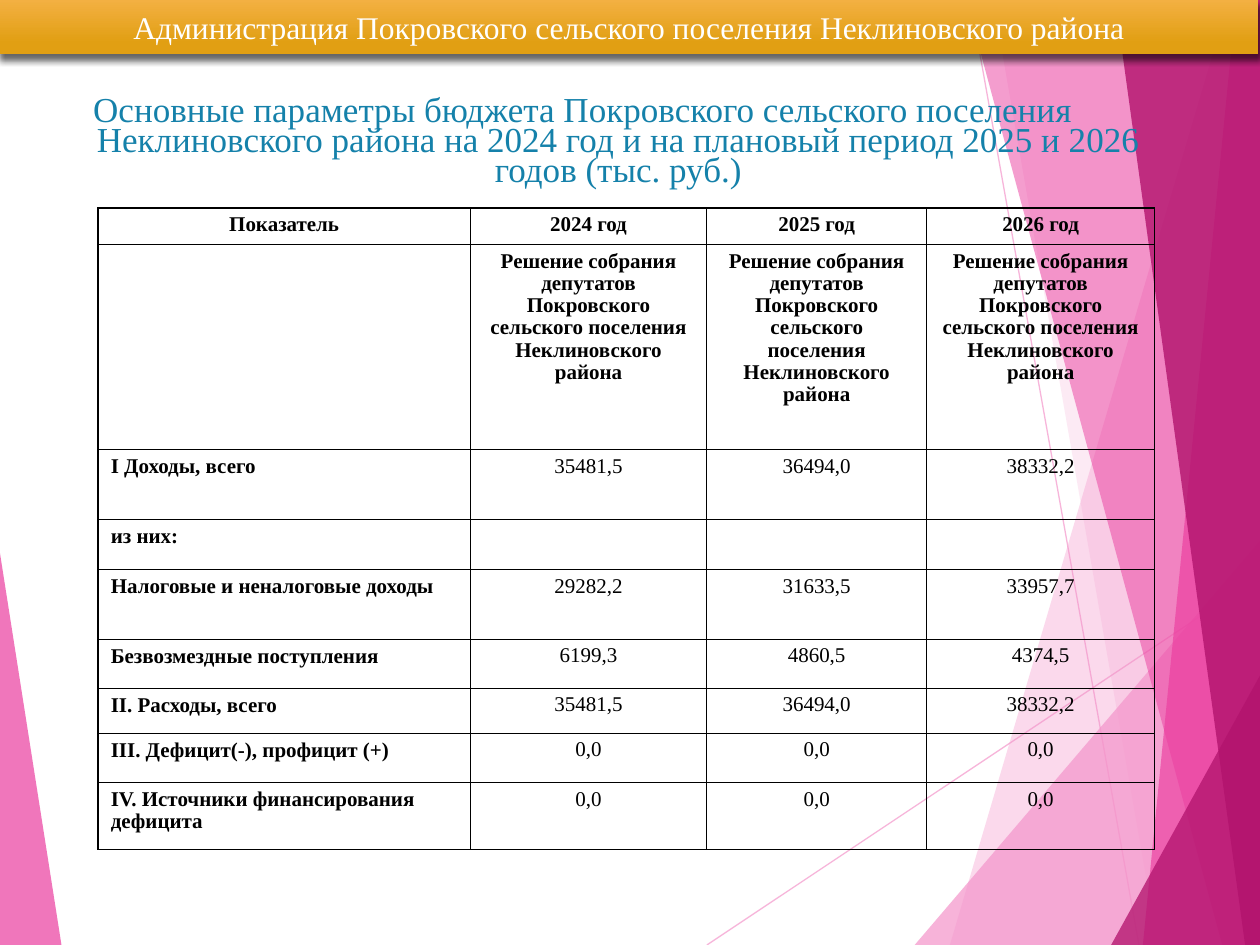
from lxml import etree
from pptx import Presentation
from pptx.dml.color import RGBColor
from pptx.enum.shapes import MSO_CONNECTOR, MSO_SHAPE
from pptx.enum.text import MSO_ANCHOR, PP_ALIGN
from pptx.oxml.ns import qn
from pptx.util import Cm, Pt

STRAIGHT, RECTANGLE = MSO_CONNECTOR.STRAIGHT, MSO_SHAPE.RECTANGLE
LEFT, CENTER, MIDDLE = PP_ALIGN.LEFT, PP_ALIGN.CENTER, MSO_ANCHOR.MIDDLE
WIDTH, HEIGHT = 25.4, 19.05
FONT = "Times New Roman"
COLORS = {
    "light": "F496CB", "pink": "EB3D9F", "dark": "B2136D",
    "title": "1581AA", "text": "000000", "white": "FFFFFF",
    "gold_top": "F3B042", "gold_bottom": "E19F13",
}

# Content
BANNER = "Администрация Покровского сельского поселения Неклиновского района"
TITLE = [
    ("Основные параметры бюджета Покровского сельского поселения",
     {"alignment": LEFT}),
    ("Неклиновского района на 2024 год и на плановый период "
     "2025 и 2026 годов (тыс. руб.)",
     {"alignment": CENTER, "line_spacing": 0.7}),
]
DECISION = ("Решение собрания депутатов Покровского сельского поселения "
            "Неклиновского района")
BUDGET = [  # row height, cells
    (0.71, ["Показатель", "2024 год", "2025 год", "2026 год"]),
    (4.14, [""] + [DECISION] * 3),
    (1.4, ["I Доходы, всего", "35481,5", "36494,0", "38332,2"]),
    (1, ["из них:", "", "", ""]),
    (1.4, ["Налоговые и неналоговые доходы", "29282,2", "31633,5", "33957,7"]),
    (0.99, ["Безвозмездные поступления", "6199,3", "4860,5", "4374,5"]),
    (0.91, ["II. Расходы, всего", "35481,5", "36494,0", "38332,2"]),
    (0.99, ["III. Дефицит(-), профицит (+)", "0,0", "0,0", "0,0"]),
    (1.35, ["IV. Источники финансирования дефицита", "0,0", "0,0", "0,0"]),
]
COLUMN_WIDTHS = [7.5, 4.77, 4.43, 4.6]
COLUMN_RULES = [1, 1, 0.5, 1, 1]
HEADER_ROWS = 2

# Backdrop: each band runs from its slanted edge to one side of the slide
RAYS = [((14.25, HEIGHT), (WIDTH, 11.62)), ((19.56, 0), (22.96, HEIGHT))]
BANDS = [  # edge start, edge end, side, colour, opacity in percent
    ((24.77, 0), (19.15, HEIGHT), WIDTH, "light", 36),
    ((20.02, 0), (23.34, HEIGHT), WIDTH, "light", 20),
    ((WIDTH, 10.9), (18.44, HEIGHT), WIDTH, "light", 72),
    ((19.48, 0), (24.64, HEIGHT), WIDTH, "pink", 50),
    ((24.92, 0), (23.04, HEIGHT), WIDTH, "pink", 66),
    ((22.48, 0), (25.1, HEIGHT), WIDTH, "dark", 80),
    ((WIDTH, 13.62), (22.4, HEIGHT), WIDTH, "dark", 76),
    ((0, 11.15), (1.24, HEIGHT), 0, "pink", 70),
]


def rgb(name):
    return RGBColor.from_string(COLORS[name])


def apply(target, formats):
    for name, value in formats.items():
        setattr(target, name, value)


def set_opacity(owner, percent):
    color = next(owner.iter(qn("a:srgbClr")))
    etree.SubElement(color, qn("a:alpha"), val=str(percent * 1000))


def write(paragraph, text, size, color, layout, bold=False):
    run = paragraph.add_run()
    run.text = text
    run.font.color.rgb = rgb(color)
    apply(run.font, {"name": FONT, "size": Pt(size), "bold": bold})
    apply(paragraph, layout)


def add_ray(slide, start, end):
    ray = slide.shapes.add_connector(
        STRAIGHT, *(Cm(value) for value in start + end))
    ray.line.color.rgb = rgb("light")
    ray.line.width = Pt(0.75)
    properties = ray._element.spPr
    set_opacity(properties, 70)
    etree.SubElement(properties, qn("a:effectLst"))


def add_band(slide, start, end, side, color, opacity):
    corners = [end, (side, HEIGHT), (side, start[1])]
    outline = slide.shapes.build_freeform(Cm(start[0]), Cm(start[1]))
    outline.add_line_segments([(Cm(x), Cm(y)) for x, y in corners], close=True)
    band = outline.convert_to_shape()
    band.shadow.inherit = False
    band.fill.solid()
    band.fill.fore_color.rgb = rgb(color)
    set_opacity(band._element.spPr, opacity)
    band.line.fill.background()


def add_title(slide):
    frame = slide.shapes.add_textbox(
        Cm(1.63), Cm(1.73), Cm(21.67), Cm(2.16)).text_frame
    apply(frame, {"word_wrap": True, "margin_top": Cm(0.03)})
    for index, (text, layout) in enumerate(TITLE):
        paragraph = frame.add_paragraph() if index else frame.paragraphs[0]
        write(paragraph, text, 20, "title", layout)


def add_border(cell, side, width):
    line = etree.SubElement(cell._tc.get_or_add_tcPr(), qn(f"a:ln{side}"),
                            w=str(Pt(width)))
    fill = etree.SubElement(line, qn("a:solidFill"))
    etree.SubElement(fill, qn("a:srgbClr"), val=COLORS["text"])


def add_budget(slide):
    heights = [height for height, _ in BUDGET]
    table = slide.shapes.add_table(
        len(BUDGET), len(COLUMN_WIDTHS), Cm(1.98), Cm(4.19),
        Cm(sum(COLUMN_WIDTHS)), Cm(sum(heights))).table
    apply(table, {"first_row": False, "horz_banding": False})
    for column, width in zip(table.columns, COLUMN_WIDTHS):
        column.width = Cm(width)
    row_rules = [1] + [0.5] * (len(BUDGET) - 1) + [1]
    for r, (height, texts) in enumerate(BUDGET):
        table.rows[r].height = Cm(height)
        for c, text in enumerate(texts):
            cell = table.cell(r, c)
            borders = {"L": COLUMN_RULES[c], "R": COLUMN_RULES[c + 1],
                       "T": row_rules[r], "B": row_rules[r + 1]}
            for side, width in borders.items():
                add_border(cell, side, width)
            cell.fill.background()
            if text:
                header = r < HEADER_ROWS
                label = header or c == 0
                layout = {"alignment": CENTER if header or c else LEFT,
                          "line_spacing": 0.95 if label else 0.93}
                write(cell.text_frame.paragraphs[0], text, 12, "text",
                      layout, bold=label)


def add_banner(slide):
    banner = slide.shapes.add_shape(RECTANGLE, 0, 0, Cm(25.37), Cm(1.1))
    banner.line.fill.background()
    banner.fill.gradient()
    banner.fill.gradient_angle = 270
    stops = [(0, "gold_top"), (0.78, "gold_bottom")]
    for stop, (position, color) in zip(banner.fill.gradient_stops, stops):
        stop.position = position
        stop.color.rgb = rgb(color)
    banner.shadow.inherit = False
    effects = banner._element.spPr.find(qn("a:effectLst"))
    shadow = etree.SubElement(
        effects, qn("a:outerShdw"), blurRad=str(Pt(4)), dist=str(Pt(3)),
        dir="5400000", rotWithShape="0")
    etree.SubElement(shadow, qn("a:srgbClr"), val=COLORS["text"])
    set_opacity(shadow, 60)
    frame = banner.text_frame
    apply(frame, {"word_wrap": True, "vertical_anchor": MIDDLE})
    write(frame.paragraphs[0], BANNER, 18, "white", {"alignment": CENTER})


def main():
    deck = Presentation()
    apply(deck, {"slide_width": Cm(WIDTH), "slide_height": Cm(HEIGHT)})
    slide = deck.slides.add_slide(deck.slide_layouts[6])
    for ray in RAYS:
        add_ray(slide, *ray)
    for band in BANDS:
        add_band(slide, *band)
    add_title(slide)
    add_budget(slide)
    add_banner(slide)
    deck.save("out.pptx")


if __name__ == "__main__":
    main()
